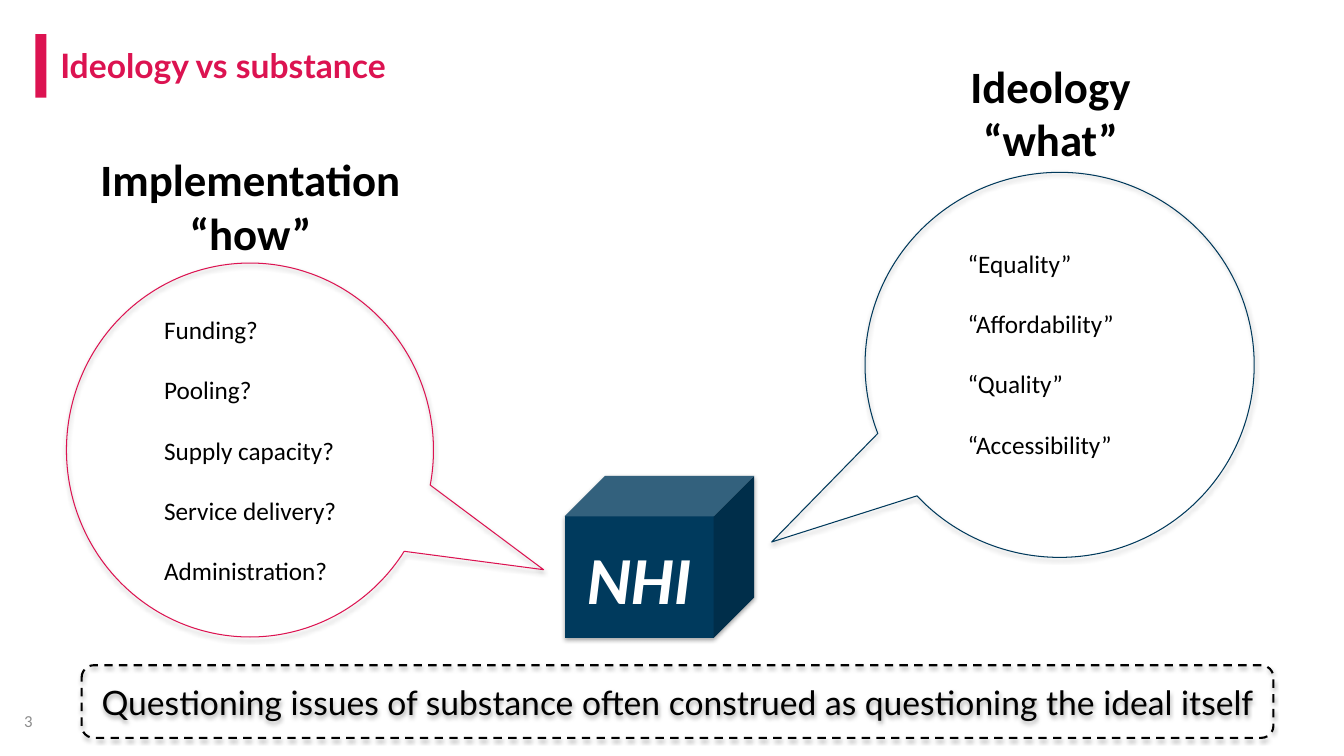
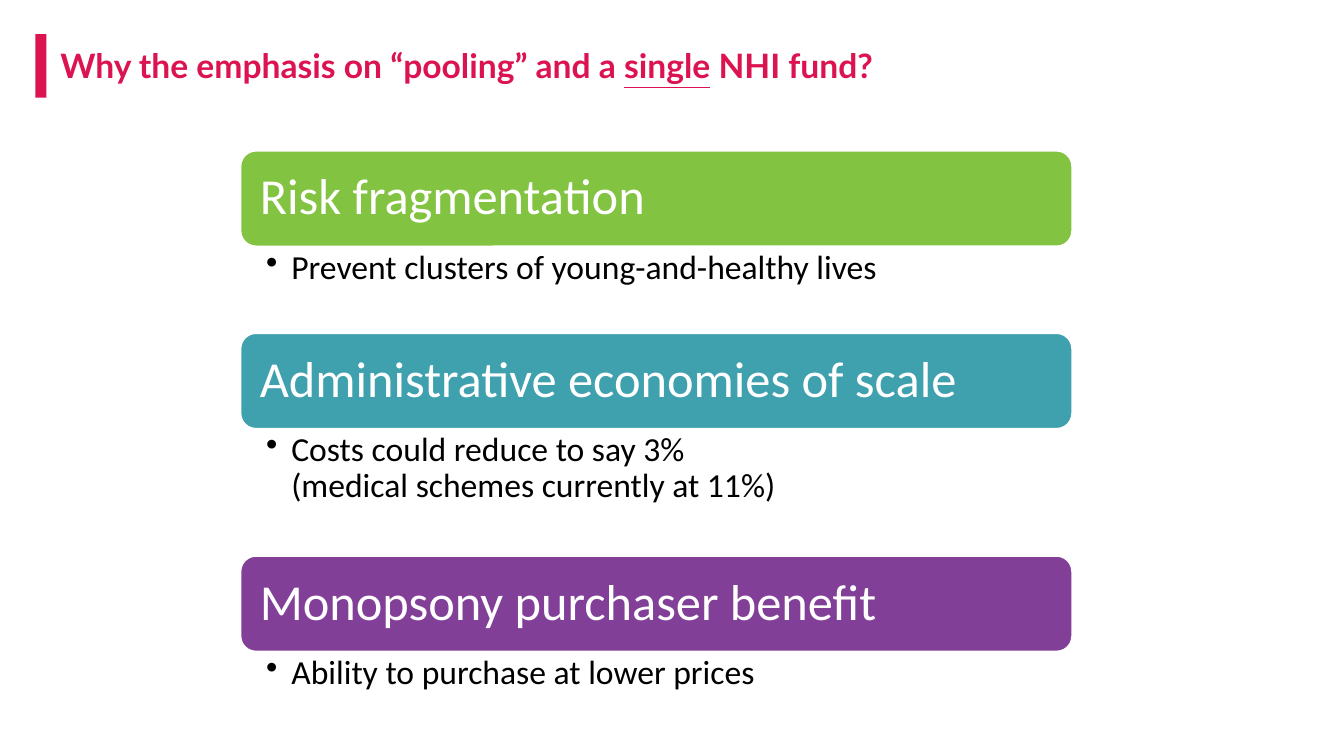
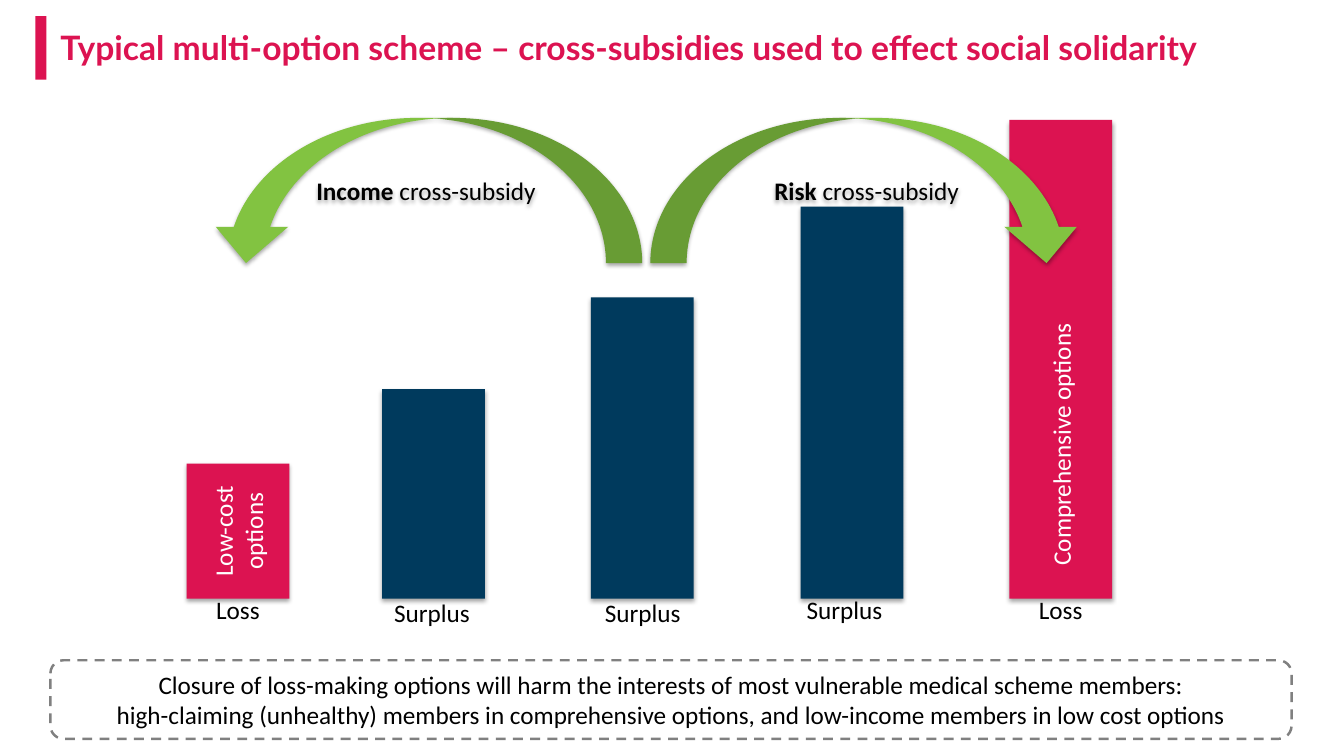
from dataclasses import dataclass, replace
from typing import Optional

import pptx
import pptx.dml.color
import pptx.enum.dml
import pptx.enum.shapes
import pptx.enum.text
import pptx.oxml
import pptx.oxml.ns
import pptx.shapes.autoshape
import pptx.slide
import pptx.util

Inches = pptx.util.Inches
Pt = pptx.util.Pt
RGBColor = pptx.dml.color.RGBColor
Kind = pptx.enum.shapes.MSO_SHAPE
Align = pptx.enum.text.PP_ALIGN
Anchor = pptx.enum.text.MSO_ANCHOR
Shape = pptx.shapes.autoshape.Shape
Slide = pptx.slide.Slide
qn = pptx.oxml.ns.qn

# Colours
PINK = RGBColor(0xDC, 0x13, 0x51)
NAVY = RGBColor(0x00, 0x3A, 0x5D)
EDGE = RGBColor(0x00, 0x39, 0x5B)
GREEN = RGBColor(0x82, 0xC3, 0x41)
TEAL = RGBColor(0x3F, 0xA0, 0xAE)
PURPLE = RGBColor(0x82, 0x3F, 0x98)
BLACK = RGBColor(0x00, 0x00, 0x00)
WHITE = RGBColor(0xFF, 0xFF, 0xFF)
GREY = RGBColor(0x80, 0x80, 0x80)
PALE = RGBColor(0x8C, 0x8C, 0x8C)


@dataclass(frozen=True)
class Box:
    left: float
    top: float
    width: float
    height: float


@dataclass(frozen=True)
class Style:
    size: float = 18
    color: RGBColor = BLACK
    font: str = "Calibri"
    bold: bool = False
    italic: bool = False
    align: Align = Align.LEFT
    anchor: Anchor = Anchor.TOP
    after: float = 0
    spacing: Optional[float] = None


@dataclass(frozen=True)
class Line:
    color: RGBColor
    width: float
    dash: bool = False


@dataclass(frozen=True)
class Bubble:
    title: str
    head: Box
    round: Box
    tip: tuple[float, float]
    color: RGBColor
    words: str
    body: Box


@dataclass(frozen=True)
class Panel:
    title: str
    color: RGBColor
    point: str
    height: float


@dataclass(frozen=True)
class Bar:
    left: float
    top: float
    color: RGBColor
    label: str
    note: Box


@dataclass(frozen=True)
class Arrow:
    left: float
    text: str
    flip: bool


BODY = Style()
MID = Style(align=Align.CENTER, anchor=Anchor.MIDDLE)
TITLE = Style(24, PINK, "Lato", bold=True)
LARGE = Style(32, bold=True, align=Align.CENTER)


# Shared drawing functions
def write(shape: Shape, text: str, style: Style) -> list:
    """Fill a shape with lines; a bar sign starts a new run."""
    frame = shape.text_frame
    frame.word_wrap = True
    frame.vertical_anchor = style.anchor
    frame.text = text
    runs = []
    for para in frame.paragraphs:
        first, *rest = para.text.split("|")
        para.text = first
        for part in rest:
            para.add_run().text = part
        para.alignment = style.align
        para.space_after = Pt(style.after)
        if style.spacing:
            para.line_spacing = style.spacing
        runs += para.runs
    for run in runs:
        font = run.font
        font.size = Pt(style.size)
        font.name = style.font
        font.bold = style.bold
        font.italic = style.italic
        font.color.rgb = style.color
    return runs


def place(box: Box) -> tuple:
    return tuple(Inches(n) for n in (box.left, box.top, box.width, box.height))


def label(slide: Slide, box: Box, text: str, style: Style = BODY) -> Shape:
    shape = slide.shapes.add_textbox(*place(box))
    write(shape, text, style)
    return shape


def shade(shape: Shape) -> None:
    """Add a soft shadow below the shape."""
    shape.element.spPr.find(qn("a:effectLst")).append(pptx.oxml.parse_xml(
        '<a:outerShdw xmlns:a="http://schemas.openxmlformats.org/drawingml/2006/main"'
        ' blurRad="40000" dist="23000" dir="5400000" rotWithShape="0">'
        '<a:srgbClr val="000000"><a:alpha val="35000"/></a:srgbClr></a:outerShdw>'))


def draw(slide: Slide, kind: Kind, box: Box, fill: Optional[RGBColor] = None,
         line: Optional[Line] = None, shadow: bool = False) -> Shape:
    shape = slide.shapes.add_shape(kind, *place(box))
    shape.shadow.inherit = False
    if fill is None:
        shape.fill.background()
    else:
        shape.fill.solid()
        shape.fill.fore_color.rgb = fill
    if line is None:
        shape.line.fill.background()
    else:
        shape.line.color.rgb = line.color
        shape.line.width = Pt(line.width)
        if line.dash:
            shape.line.dash_style = pptx.enum.dml.MSO_LINE.DASH
    if shadow:
        shade(shape)
    return shape


def start(deck, title: str, top: float = 0.34) -> tuple[Slide, list]:
    """Add a slide with the title and its side band."""
    slide = deck.slides.add_slide(deck.slide_layouts[6])
    box = slide.shapes.add_textbox(*place(Box(0.5, top + 0.06, 12.66, 0.5)))
    runs = write(box, title, TITLE)
    draw(slide, Kind.RECTANGLE, Box(0.35, top, 0.11, 0.63), PINK)
    return slide, runs


# Slide 1: two speech bubbles about the cube
BUBBLES = (
    Bubble("Ideology\n“what”", Box(9.3, 0.53, 2.24, 1.18),
           Box(8.58, 1.71, 3.86, 3.82), (-0.74, 0.46), EDGE,
           "“Equality”\n“Affordability”\n“Quality”\n“Accessibility”",
           Box(9.5, 2.41, 2.46, 2.52)),
    Bubble("Implementation\n“how”", Box(0.81, 1.46, 3.35, 1.18),
           Box(0.66, 2.61, 3.64, 3.71), (0.8, 0.32), PINK,
           "Funding?\nPooling?\nSupply capacity?\nService delivery?\nAdministration?",
           Box(1.53, 3.07, 2.46, 2.83)),
)


def ideas(deck) -> None:
    slide, _ = start(deck, "Ideology vs substance")
    label(slide, Box(0.14, 6.95, 3.11, 0.4), "3",
          Style(12, PALE, anchor=Anchor.MIDDLE))
    for item in BUBBLES:
        shape = draw(slide, Kind.OVAL_CALLOUT, item.round,
                     line=Line(item.color, 0.75), shadow=True)
        shape.adjustments[0], shape.adjustments[1] = item.tip
        label(slide, item.body, item.words, replace(BODY, after=21.5))
        label(slide, item.head, item.title, LARGE)
    cube = draw(slide, Kind.CUBE, Box(5.6, 4.72, 1.88, 1.61), NAVY, shadow=True)
    write(cube, "NHI", replace(MID, size=48, color=WHITE, bold=True, italic=True))
    foot = draw(slide, Kind.ROUNDED_RECTANGLE, Box(0.81, 6.6, 11.82, 0.72),
                line=Line(BLACK, 1.5, True), shadow=True)
    write(foot, "Questioning issues of substance often construed as "
                "questioning the ideal itself",
          replace(MID, size=24, font="Lato"))


# Slide 2: three stacked panels
PANELS = (
    Panel("Risk fragmentation", GREEN,
          "Prevent clusters of young-and-healthy lives", 0.85),
    Panel("Administrative economies of scale", TEAL,
          "Costs could reduce to say 3%\v(medical schemes currently at 11%)", 1.25),
    Panel("Monopsony purchaser benefit", PURPLE,
          "Ability to purchase at lower prices", 0.85),
)


def pad(shape: Shape, left: float, top: float, right: float) -> None:
    frame = shape.text_frame
    frame.margin_left, frame.margin_right = Inches(left), Inches(right)
    frame.margin_top = frame.margin_bottom = Inches(top)


def indent(shape: Shape, left: float, first: float = 0, mark: str = "") -> None:
    props = shape.text_frame.paragraphs[0]._p.get_or_add_pPr()
    props.set("marL", str(Inches(left)))
    props.set("indent", str(Inches(first)))
    if mark:
        bullet = props.makeelement(qn("a:buChar"), {"char": mark})
        props.append(bullet)


def pools(deck) -> None:
    slide, runs = start(
        deck, "Why the emphasis on “pooling” and a |single| NHI fund?")
    runs[1].font.underline = True
    left, top, width, tall = 2.38, 1.49, 8.26, 0.96
    for item in PANELS:
        band = draw(slide, Kind.ROUNDED_RECTANGLE, Box(left, top, width, tall),
                    item.color, Line(WHITE, 2))
        write(band, item.title,
              Style(36, WHITE, anchor=Anchor.MIDDLE, spacing=0.9))
        pad(band, 0.15, 0.15, 0.15)
        top += tall
        note = label(slide, Box(left, top, width, item.height), item.point,
                     Style(24, spacing=0.9))
        pad(note, 0.26, 0.03, 0.19)
        indent(note, 0.25, -0.25, "•")
        top += item.height


# Slide 3: bars with cross-subsidy arrows
BASE, WIDE = 5.94, 1.02
BARS = (
    Bar(1.85, 4.6, PINK, "Loss", Box(1.85, 5.85, 1.02, 0.4)),
    Bar(3.79, 3.86, NAVY, "Surplus", Box(3.48, 5.88, 1.61, 0.4)),
    Bar(5.86, 2.95, NAVY, "Surplus", Box(5.57, 5.88, 1.61, 0.4)),
    Bar(7.94, 2.05, NAVY, "Surplus", Box(7.57, 5.85, 1.61, 0.4)),
    Bar(10.01, 1.19, PINK, "Loss", Box(10.01, 5.85, 1.02, 0.4)),
)
ARROWS = (
    Arrow(2.08, "Income |cross-subsidy", True),
    Arrow(6.45, "Risk| cross-subsidy", False),
)


def upright(shape: Shape, text: str, style: Style) -> None:
    write(shape, text, replace(style, color=WHITE))
    shape.text_frame._txBody.bodyPr.set("vert", "vert270")


def scheme(deck) -> None:
    slide, _ = start(deck, "Typical multi-option scheme – cross-subsidies "
                           "used to effect social solidarity", 0.16)
    bars = []
    for item in BARS:
        bars.append(draw(slide, Kind.RECTANGLE,
                         Box(item.left, item.top, WIDE, BASE - item.top),
                         item.color, shadow=True))
        label(slide, item.note, item.label, replace(BODY, align=Align.CENTER))
    upright(bars[0], "Low-cost options", MID)
    upright(bars[-1], "Comprehensive options", replace(MID, align=Align.LEFT))
    indent(bars[-1], 0.23)

    for item in ARROWS:
        shape = draw(slide, Kind.CURVED_DOWN_ARROW,
                     Box(item.left, 1.17, 4.29, 1.44), GREEN, shadow=True)
        if item.flip:
            shape.element.spPr.find(qn("a:xfrm")).set("flipH", "1")
        write(shape, item.text, MID)[0].font.bold = True

    foot = draw(slide, Kind.ROUNDED_RECTANGLE, Box(0.5, 6.55, 12.31, 0.78),
                line=Line(GREY, 1.75, True))
    write(foot, "Closure of loss-making options will harm the interests of most "
                "vulnerable medical scheme members:\n"
                "high-claiming (unhealthy) members in comprehensive options, "
                "and low-income members in low cost options",
          replace(BODY, align=Align.CENTER))


def main() -> None:
    deck = pptx.Presentation()
    deck.slide_width, deck.slide_height = Inches(13.33), Inches(7.5)
    ideas(deck)
    pools(deck)
    scheme(deck)
    deck.save("out.pptx")


if __name__ == "__main__":
    main()
